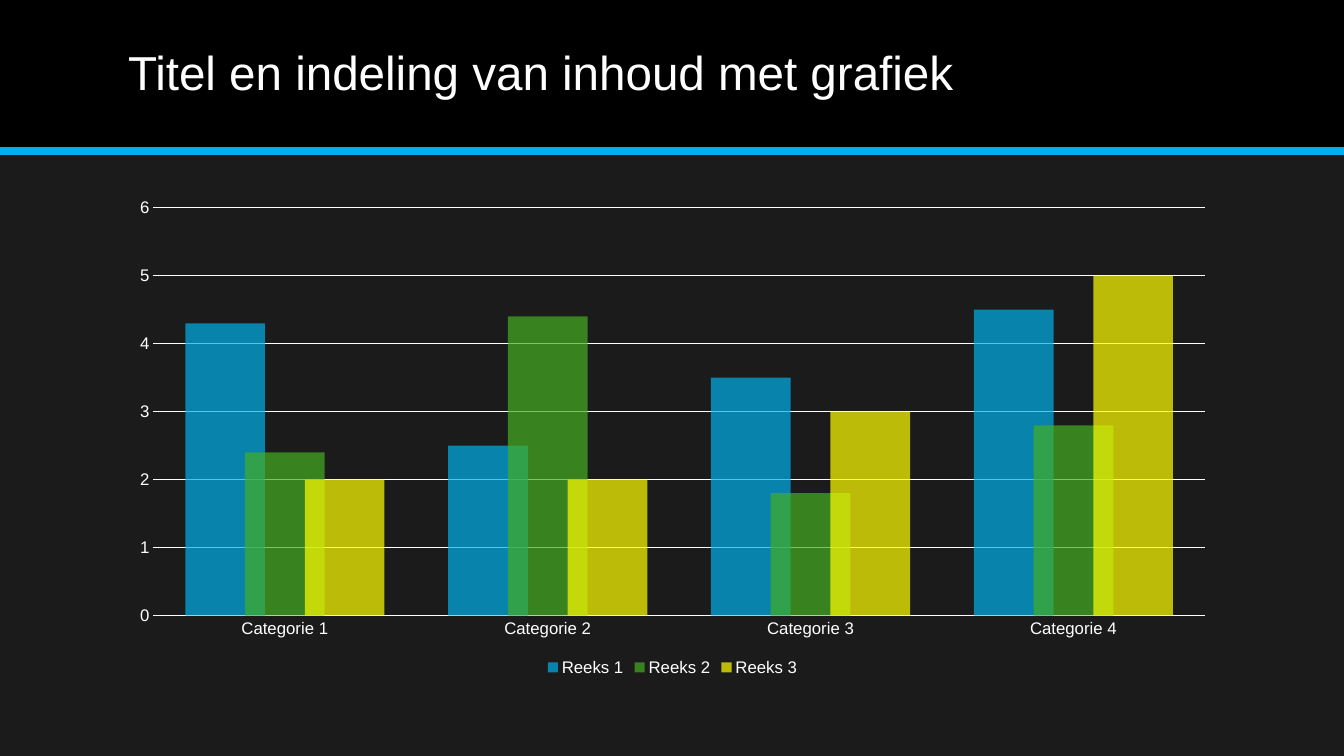
"""Build a dark title slide with a translucent clustered column chart."""
from lxml.etree import SubElement
from pptx import Presentation
from pptx.chart.data import CategoryChartData
from pptx.dml.color import RGBColor
from pptx.enum.chart import XL_CHART_TYPE as ChartType, XL_LEGEND_POSITION as LegendPlace
from pptx.enum.chart import XL_TICK_MARK as TickMark
from pptx.enum.shapes import MSO_CONNECTOR as Connector, MSO_SHAPE as Shape
from pptx.enum.text import MSO_ANCHOR as Anchor, MSO_AUTO_SIZE as AutoSize, PP_ALIGN as Align
from pptx.oxml.ns import qn
from pptx.util import Inches, Pt

TITLE = "Titel en indeling van inhoud met grafiek"
CATEGORIES = ["Categorie 1", "Categorie 2", "Categorie 3", "Categorie 4"]
SERIES = [
    ("Reeks 1", [4.3, 2.5, 3.5, 4.5], "00B0EA"),
    ("Reeks 2", [2.4, 4.4, 1.8, 2.8], "45AE22"),
    ("Reeks 3", [2, 2, 3, 5], "FFFF00"),
]
FONT, WHITE, BLACK, BACKGROUND, ACCENT = "Arial", "FFFFFF", "000000", "1B1B1B", "00B0EA"
OPACITY_PERCENT = 70

WIDTH, HEIGHT = Inches(13.33), Inches(7.5)
BAND_HEIGHT = HEIGHT // 5
LEFT, CONTENT_WIDTH = Inches(1.17), Inches(11)
TITLE_TOP, TITLE_HEIGHT = Inches(0.14), Inches(1.2)
CHART_TOP, CHART_HEIGHT = HEIGHT // 4, HEIGHT * 65 // 100


def paint(color_format, color):
    color_format.rgb = RGBColor.from_string(color)


def fill(part, color):
    part.fill.solid()
    paint(part.fill.fore_color, color)


def stroke(line, color, points):
    paint(line.color, color)
    line.width = Pt(points)


def style_font(font, size, color=WHITE):
    font.name = FONT
    font.size = Pt(size)
    font.bold = False
    paint(font.color, color)


def write(frame, text, size, color=WHITE, align=Align.LEFT, anchor=Anchor.MIDDLE, spacing=0.9):
    frame.text = text
    frame.word_wrap = True
    frame.auto_size = AutoSize.NONE
    frame.vertical_anchor = anchor
    paragraph = frame.paragraphs[0]
    paragraph.alignment = align
    paragraph.line_spacing = spacing
    style_font(paragraph.runs[0].font, size, color)


def add_header(slide):
    band = slide.shapes.add_shape(Shape.RECTANGLE, 0, 0, WIDTH, BAND_HEIGHT)
    band.shadow.inherit = False
    fill(band, BLACK)
    band.line.fill.background()

    rule = slide.shapes.add_connector(Connector.STRAIGHT, 0, BAND_HEIGHT, WIDTH, BAND_HEIGHT)
    stroke(rule.line, ACCENT, 6)
    SubElement(rule.element.spPr, qn("a:effectLst"))

    title = slide.shapes.title
    title.left, title.top = LEFT, TITLE_TOP
    title.width, title.height = CONTENT_WIDTH, TITLE_HEIGHT
    write(title.text_frame, TITLE, size=34)
    title.element.getparent().append(title.element)


def add_column_chart(slide):
    results = CategoryChartData()
    results.categories = CATEGORIES
    for name, values, _ in SERIES:
        results.add_series(name, values)
    chart = slide.shapes.add_chart(ChartType.COLUMN_CLUSTERED, LEFT, CHART_TOP,
                                   CONTENT_WIDTH, CHART_HEIGHT, results).chart
    style_font(chart.font, 10)
    chart.has_title = False
    style_legend(chart)
    style_axes(chart.category_axis, chart.value_axis)
    style_columns(chart.plots[0])


def style_legend(chart):
    chart.has_legend = True
    chart.legend.position = LegendPlace.BOTTOM
    chart.legend.include_in_layout = False
    style_font(chart.legend.font, 12)


def style_axes(category_axis, value_axis):
    for axis in (category_axis, value_axis):
        axis.major_tick_mark = axis.minor_tick_mark = TickMark.NONE
        style_font(axis.tick_labels.font, 12)
    stroke(category_axis.format.line, WHITE, 1.25)
    value_axis.format.line.fill.background()
    stroke(value_axis.major_gridlines.format.line, WHITE, 0.75)


def style_columns(plot):
    plot.gap_width, plot.overlap, plot.vary_by_categories = 80, 25, False
    for columns, (_, _, color) in zip(plot.series, SERIES):
        columns.invert_if_negative = False
        fill(columns.format, color)
        tint = next(columns.format.fill._xPr.iter(qn("a:srgbClr")))
        SubElement(tint, qn("a:alpha"), val=str(OPACITY_PERCENT * 1000))


def main():
    deck = Presentation()
    deck.slide_width, deck.slide_height = WIDTH, HEIGHT
    slide = deck.slides.add_slide(deck.slide_layouts.get_by_name("Title Only"))
    fill(slide.background, BACKGROUND)
    add_header(slide)
    add_column_chart(slide)
    deck.save("out.pptx")


if __name__ == "__main__":
    main()
